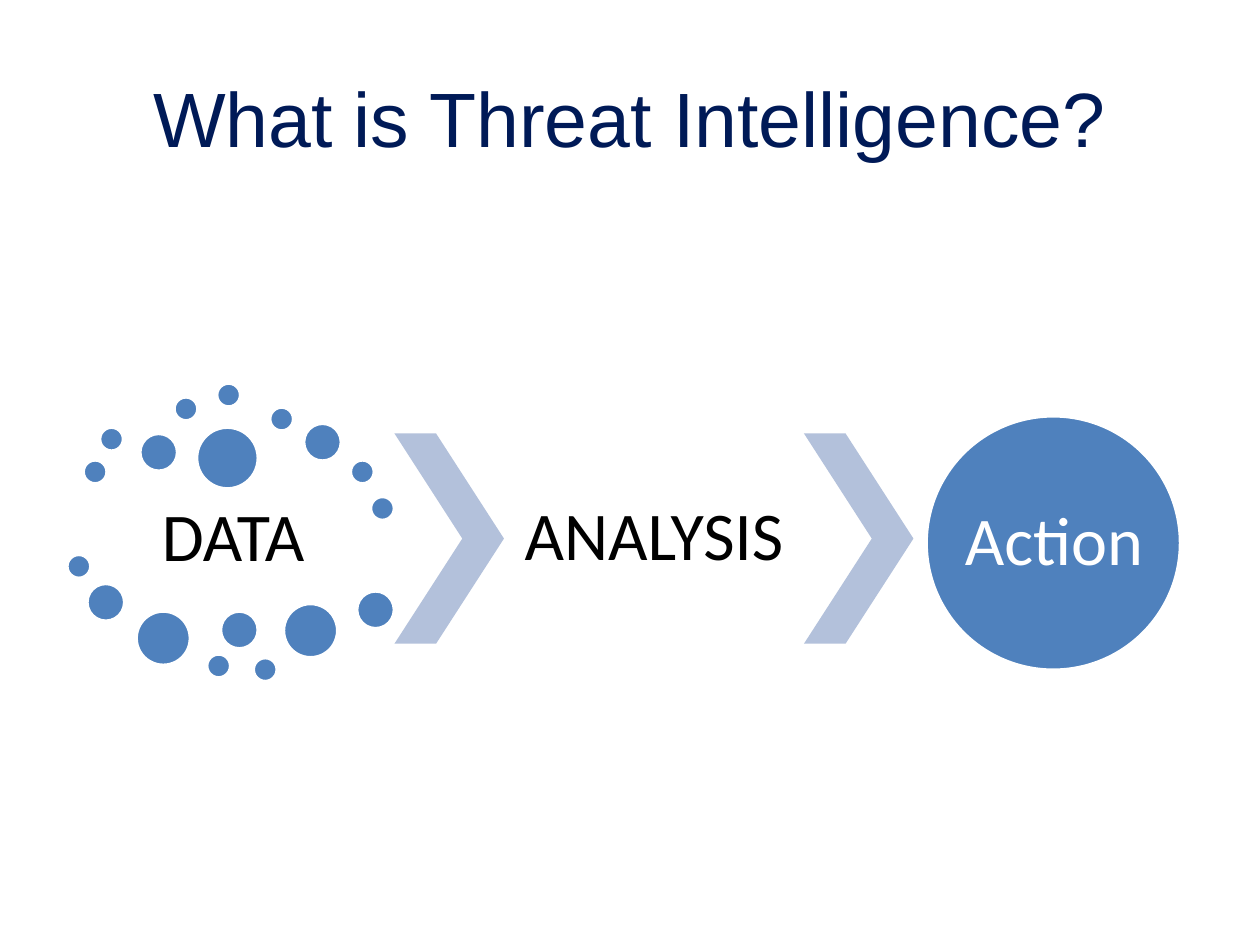
from pptx import Presentation
from pptx.dml.color import RGBColor
from pptx.enum import shapes, text
from pptx.util import Pt

NAVY, BLUE, PALE_BLUE = "001A57", "4F81BD", "B3C1DB"
BLACK, WHITE = "000000", "FFFFFF"

# Left and top of the data dots, by diameter
DATA_DOTS = {
    13.7: [(47.5, 262.8), (56.9, 244.1), (99.4, 226.8), (123.8, 218.9),
           (154.1, 232.6), (200.2, 262.8), (211.7, 283.7), (38.2, 316.8),
           (118.1, 373.7), (144.7, 375.8)],
    21.6: [(79.9, 247.7), (173.5, 241.9), (49.7, 333.4), (126, 349.2),
           (203.8, 337.7)],
    31: [(77.8, 349.2), (162, 344.9)],
    35.3: [(112.3, 244.1)],
}


def rgb(hex_color):
    return RGBColor.from_string(hex_color)


class Deck:
    heading_font, heading_size = "Arial", 44
    label_font, label_size = "Calibri", 39

    def __init__(self, width, height):
        self.presentation = Presentation()
        self.presentation.slide_width = Pt(width)
        self.presentation.slide_height = Pt(height)
        self.slide = self.presentation.slides.add_slide(
            self.presentation.slide_layouts[6])

    def centred_text(self, wording, box, font, size, color, inset, spacing):
        frame = self.slide.shapes.add_textbox(*map(Pt, box)).text_frame
        frame.word_wrap = True
        frame.vertical_anchor = text.MSO_ANCHOR.MIDDLE
        frame.margin_left = frame.margin_right = Pt(inset)
        frame.margin_top = frame.margin_bottom = Pt(min(inset, 3.6))
        paragraph = frame.paragraphs[0]
        paragraph.text = wording
        paragraph.alignment = text.PP_ALIGN.CENTER
        paragraph.line_spacing = spacing
        paragraph.font.name = font
        paragraph.font.size = Pt(size)
        paragraph.font.color.rgb = rgb(color)

    def heading(self, wording, box):
        self.centred_text(wording, box, self.heading_font, self.heading_size,
                          NAVY, 7.2, 1.0)

    def label(self, wording, box, color=BLACK, inset=3.6):
        self.centred_text(wording, box, self.label_font, self.label_size,
                          color, inset, 0.9)

    def solid(self, kind, box, fill):
        shape = self.slide.shapes.add_shape(kind, *map(Pt, box))
        shape.shadow.inherit = False
        shape.fill.solid()
        shape.fill.fore_color.rgb = rgb(fill)
        shape.line.fill.background()
        return shape

    def circle(self, left, top, diameter):
        disc = self.solid(shapes.MSO_SHAPE.OVAL,
                          (left, top, diameter, diameter), BLUE)
        disc.line.color.rgb = rgb(WHITE)
        disc.line.width = Pt(2)

    def chevron(self, box):
        arrow = self.solid(shapes.MSO_SHAPE.CHEVRON, box, PALE_BLUE)
        arrow.adjustments[0] = 0.62


def main():
    deck = Deck(720, 540)
    deck.heading("What is Threat Intelligence?", (36, 21.6, 648, 90))

    deck.label("DATA", (47.5, 280.1, 171.4, 56.2))
    for diameter, corners in DATA_DOTS.items():
        for left, top in corners:
            deck.circle(left, top, diameter)

    band_top, band_height = 247.7, 120.2
    for left in (225.4, 459.4):
        deck.chevron((left, band_top, 62.6, band_height))
    deck.label("ANALYSIS", (288, band_top, 171.4, band_height))

    deck.circle(529.2, 237.6, 145.4)
    deck.label("Action", (550.8, 259.2, 103, 103), WHITE, inset=0)

    deck.presentation.save("out.pptx")


if __name__ == "__main__":
    main()
